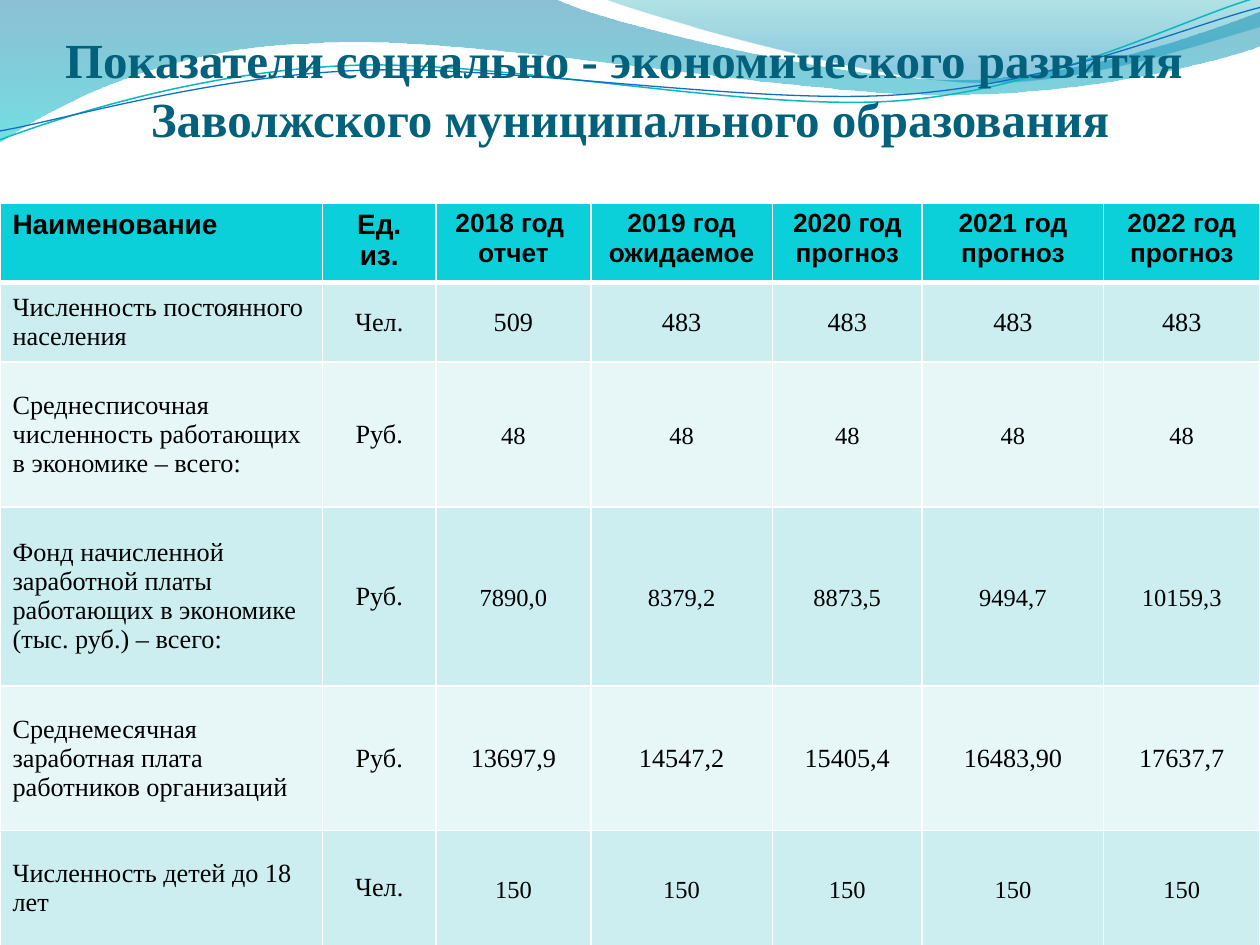
import math

import lxml.etree
import pptx
import pptx.dml.color
import pptx.enum.text
import pptx.oxml.ns
import pptx.util

Inches = pptx.util.Inches
Pt = pptx.util.Pt
qn = pptx.oxml.ns.qn
ALIGN = pptx.enum.text.PP_ALIGN
ANCHOR = pptx.enum.text.MSO_ANCHOR

COLORS = {
    "title": "04617B", "text": "000000", "border": "FFFFFF",
    "header": "0BD0D9", "odd": "CCEEF1", "even": "E7F7F8",
    "deep_blue": "0074A1", "cyan": "00C6CF", "teal": "00A1A9", "blue": "008BBF",
    "teal_line": "0AB8BF", "blue_line": "0F6FC6",
}
SERIF = "Times New Roman"
SANS = "Arial"
CURVE_TILT = 2.7

LEFT_WAVE = [
    [(0, 0)], [(4.4, -0.01)],
    [(4.76, 0.17), (6.64, 0.63), (7.58, 0.63)],
    [(8.53, 0.63), (9.58, 0.26), (10, 0.09)],
    [(10.01, 0.36)],
    [(9.83, 0.44), (8.7, 0.76), (7.46, 0.75)],
    [(6.22, 0.75), (3.82, 0.28), (2.57, 0.34)],
    [(1.29, 0.36), (0.46, 0.83), (-0.01, 1.13)],
    [(0, 0)],
]
RIGHT_WAVE = [
    [(4.79, -0.01)],
    [(5.09, 0.11), (6.82, 0.62), (7.69, 0.65)],
    [(8.56, 0.69), (9.61, 0.32), (10, 0.21)],
    [(10, 0)], [(4.79, -0.01)],
]
TEAL_CURVE = [
    [(0, 1.11)],
    [(0.48, 0.93), (1.58, 0.57), (2.77, 0.52)],
    [(3.95, 0.47), (5.93, 0.89), (7.13, 0.8)],
    [(8.33, 0.71), (9.38, 0.15), (9.98, -0.02)],
]
BLUE_CURVE = [
    [(0, 1.04)],
    [(0.47, 0.96), (1.64, 0.61), (2.83, 0.56)],
    [(4.03, 0.51), (5.97, 0.84), (7.17, 0.75)],
    [(8.36, 0.67), (9.41, 0.21), (10, 0.06)],
]

COLUMN_WIDTHS = [2.56, 0.9, 1.23, 1.44, 1.19, 1.44, 1.24]
ROW_HEIGHTS = [0.63, 0.63, 1.15, 1.42, 1.15, 0.91]
HEADERS = ["Наименование", "Ед. из.", "2018 год  отчет", "2019 год ожидаемое",
           "2020 год прогноз", "2021 год\nпрогноз", "2022 год прогноз"]
PLAIN = {"size": 15}
SPACED = {"size": 14, "line_spacing": 1.15, "margins": (0.07, 0, 0.07, 0)}
TIGHT = {"size": 15, "margins": (0.01, 0.01, 0.01, 0)}
INDICATORS = [
    ("Численность постоянного населения", "Чел.",
     ["509"] + ["483"] * 4, PLAIN),
    ("Среднесписочная численность работающих в экономике – всего:", "Руб.",
     ["48"] * 5, SPACED),
    ("Фонд начисленной заработной платы работающих в экономике (тыс. руб.) – всего:", "Руб.",
     ["7890,0", "8379,2", "8873,5", "9494,7", "10159,3"], SPACED),
    ("Среднемесячная заработная плата работников организаций", "Руб.",
     ["13697,9", "14547,2", "15405,4", "16483,90", "17637,7"], TIGHT),
    ("Численность детей до 18 лет", "Чел.",
     ["150"] * 5, SPACED),
]


def rgb(name):
    return pptx.dml.color.RGBColor.from_string(COLORS[name])


def write_text(frame, text, size=15, font=SERIF, color="text", bold=False,
               align=ALIGN.CENTER, line_spacing=None):
    frame.word_wrap = True
    frame.text = text
    for paragraph in frame.paragraphs:
        paragraph.alignment = align
        if line_spacing:
            paragraph.line_spacing = line_spacing
        for run in paragraph.runs:
            run.font.size = Pt(size)
            run.font.name = font
            run.font.bold = bold
            run.font.color.rgb = rgb(color)


def add_outline(slide, segments, close):
    ends = [(Inches(x), Inches(y)) for x, y in (segment[-1] for segment in segments)]
    builder = slide.shapes.build_freeform(*ends[0])
    builder.add_line_segments(ends[1:], close=close)
    shape = builder.convert_to_shape()
    shape.shadow.inherit = False
    lines = list(shape.element.spPr.iter(qn("a:lnTo")))
    for line, segment in zip(lines, segments[1:]):
        if len(segment) == 3:
            line_points = [(Inches(x) - shape.left, Inches(y) - shape.top) for x, y in segment]
            curve = lxml.etree.Element(qn("a:cubicBezTo"))
            for x, y in line_points:
                lxml.etree.SubElement(curve, qn("a:pt"), x=str(x), y=str(y))
            line.getparent().replace(line, curve)
    return shape


def add_wave(slide, segments, stops):
    shape = add_outline(slide, segments, True)
    shape.line.fill.background()
    shape.fill.gradient()
    shape.fill.gradient_angle = 270
    for stop, (position, color, opacity) in zip(shape.fill.gradient_stops, stops):
        stop.position = position
        stop.color.rgb = rgb(color)
    elements = shape.element.spPr.iter(qn("a:srgbClr"))
    for element, (position, color, opacity) in zip(elements, stops):
        lxml.etree.SubElement(element, qn("a:alpha")).set("val", str(opacity * 1000))


def rotate(point, center, degrees):
    angle = math.radians(degrees)
    x, y = point[0] - center[0], point[1] - center[1]
    return (center[0] + x * math.cos(angle) - y * math.sin(angle),
            center[1] + x * math.sin(angle) + y * math.cos(angle))


def add_curve(slide, segments, color, width):
    start, end = segments[0][-1], segments[-1][-1]
    center = ((start[0] + end[0]) / 2, (start[1] + end[1]) / 2)
    level = [[rotate(point, center, CURVE_TILT) for point in segment] for segment in segments]
    shape = add_outline(slide, level, False)
    shape.rotation = 360 - CURVE_TILT
    shape.fill.background()
    shape.line.color.rgb = rgb(color)
    shape.line.width = Pt(width)


def add_title(slide, text):
    shape = slide.shapes.add_textbox(Inches(0.5), 0, Inches(9), Inches(1.17))
    frame = shape.text_frame
    frame.margin_left = frame.margin_right = frame.margin_bottom = 0
    frame.vertical_anchor = ANCHOR.BOTTOM
    write_text(frame, text, size=28, color="title", bold=True)


def set_borders(cell, bottom):
    properties = cell._tc.get_or_add_tcPr()
    widths = {"a:lnL": 1, "a:lnR": 1, "a:lnT": 1, "a:lnB": bottom}
    for index, (tag, width) in enumerate(widths.items()):
        line = lxml.etree.Element(qn(tag), w=str(Pt(width)))
        fill = lxml.etree.SubElement(line, qn("a:solidFill"))
        lxml.etree.SubElement(fill, qn("a:srgbClr")).set("val", COLORS["border"])
        properties.insert(index, line)


def fill_cell(cell, text, fill, anchor=ANCHOR.MIDDLE, margins=(0.1, 0.05, 0.1, 0.05),
              bottom=1, **text_format):
    cell.fill.solid()
    cell.fill.fore_color.rgb = rgb(fill)
    cell.vertical_anchor = anchor
    cell.margin_left, cell.margin_top, cell.margin_right, cell.margin_bottom = map(Inches, margins)
    set_borders(cell, bottom)
    write_text(cell.text_frame, text, **text_format)


def add_indicator_table(slide):
    table = slide.shapes.add_table(len(ROW_HEIGHTS), len(COLUMN_WIDTHS), 0, Inches(1.61),
                                   Inches(10), Inches(5.89)).table
    for column, width in zip(table.columns, COLUMN_WIDTHS):
        column.width = Inches(width)
    for row, height in zip(table.rows, ROW_HEIGHTS):
        row.height = Inches(height)
    for index, header in enumerate(HEADERS):
        fill_cell(table.cell(0, index), header, "header", anchor=ANCHOR.TOP, bottom=3,
                  size=16 if index < 2 else 15, font=SANS, bold=True,
                  align=ALIGN.CENTER if index else ALIGN.LEFT)
    for row, (name, unit, values, value_format) in enumerate(INDICATORS, 1):
        band = "odd" if row % 2 else "even"
        fill_cell(table.cell(row, 0), name, band, align=ALIGN.LEFT)
        fill_cell(table.cell(row, 1), unit, band)
        for column, value in enumerate(values, 2):
            fill_cell(table.cell(row, column), value, band, **value_format)


def main():
    presentation = pptx.Presentation()
    presentation.slide_width = Inches(10)
    presentation.slide_height = Inches(7.5)
    slide = presentation.slides.add_slide(presentation.slide_layouts[6])
    add_wave(slide, LEFT_WAVE, [(0, "deep_blue", 45), (1, "cyan", 55)])
    add_wave(slide, RIGHT_WAVE, [(0, "teal", 30), (0.8, "blue", 45)])
    add_curve(slide, TEAL_CURVE, "teal_line", 0.85)
    add_curve(slide, BLUE_CURVE, "blue_line", 0.75)
    add_title(slide, "Показатели социально - экономического развития \vЗаволжского муниципального образования")
    add_indicator_table(slide)
    presentation.save("out.pptx")


if __name__ == "__main__":
    main()
